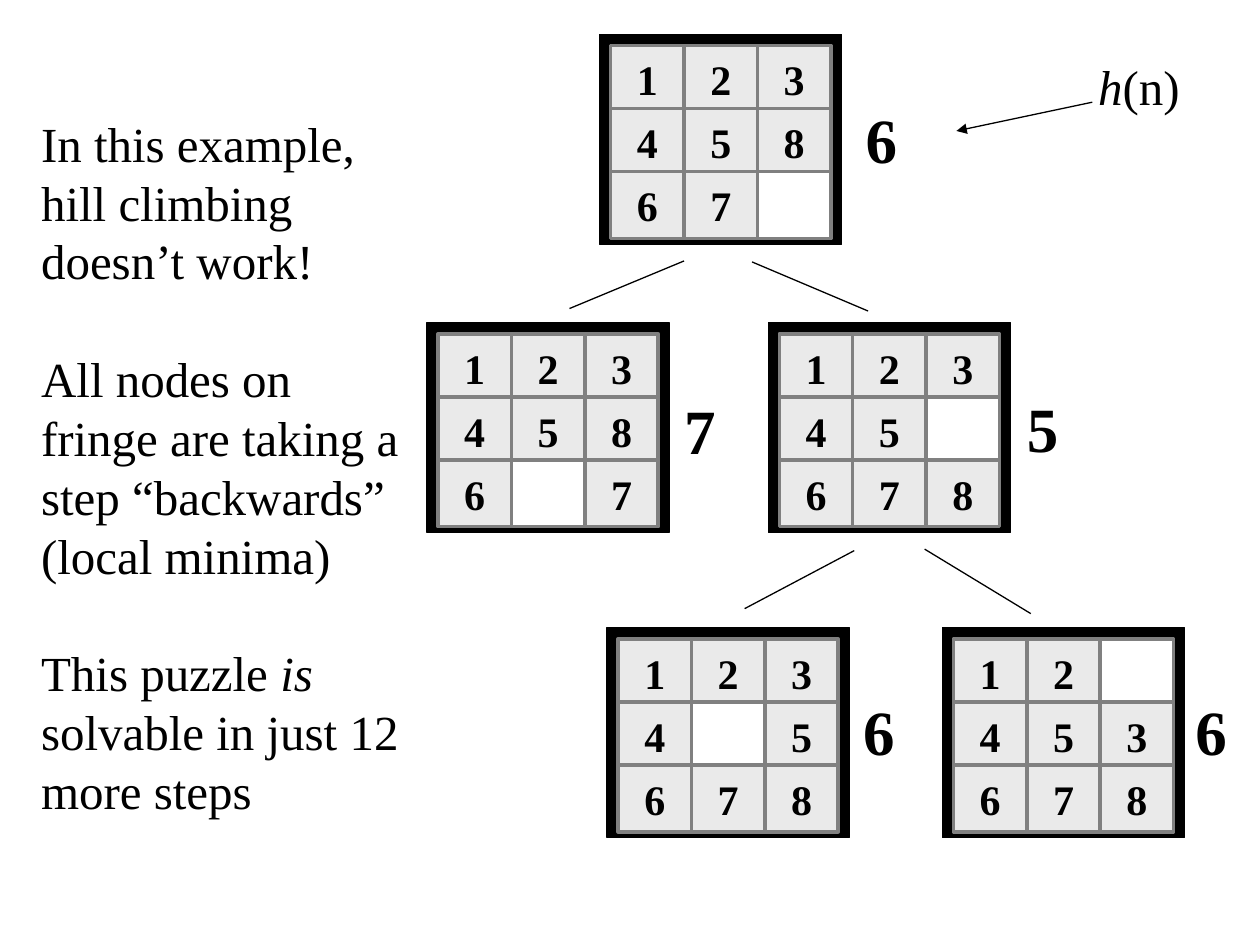
"""Build a slide showing hill climbing stuck in a local minimum of the 8-puzzle."""
from lxml import etree
from pptx import Presentation
from pptx import util as u
from pptx.dml.color import RGBColor
from pptx.enum import shapes, text
from pptx.oxml.ns import qn

BLACK = RGBColor(0x00, 0x00, 0x00)
WHITE = RGBColor(0xFF, 0xFF, 0xFF)
TILE_GREY = RGBColor(0xEA, 0xEA, 0xEA)
EDGE_GREY = RGBColor(0x80, 0x80, 0x80)
FONT = "Times New Roman"

PUZZLES = [
    {"at": (12.09, 0.69), "rows": ("123", "458", "67 "), "score": ("6", 17.2, 1.91)},
    {"at": (15.49, 6.5), "rows": ("123", "45 ", "678"), "score": ("5", 20.45, 7.72)},
    {"at": (8.61, 6.5), "rows": ("123", "458", "6 7"), "score": ("7", 13.54, 7.77)},
    {"at": (12.24, 12.65), "rows": ("123", "4 5", "678"), "score": ("6", 17.15, 13.84)},
    {"at": (19.0, 12.65), "rows": ("12 ", "453", "678"), "score": ("6", 23.85, 13.84)},
]
BRANCHES = [
    (13.79, 5.26, 11.48, 6.22),
    (15.16, 5.28, 17.5, 6.27),
    (17.22, 11.1, 15.01, 12.27),
    (18.64, 11.07, 20.78, 12.37),
]
SCORE_ARROW = (22.02, 2.06, 19.28, 2.64)
REMARKS = [
    (0, [("In this example, hill climbing doesn’t work!", False)]),
    (33.6, [("All nodes on fringe are taking a step “backwards”", False)]),
    (0, [("(local minima)", False)]),
    (33.6, [("This puzzle ", False), ("is", True),
            (" solvable in just 12 more steps", False)]),
]
HEURISTIC = [(0, [("h", True), ("(n)", False)])]

FRAME_SIZE = (4.88, 4.24)
TILE_SIZE = (1.48, 1.35)
TILE_INSET = (0.22, 0.23)
TILE_PITCH = (1.48, 1.27)


def add_run(paragraph, words, size, bold=False, italic=False):
    run = paragraph.add_run()
    run.text = words
    font = run.font
    font.name, font.size = FONT, u.Pt(size)
    font.bold, font.italic = bold, italic
    font.color.rgb = BLACK


def add_box(group, box, fill, edge, weight):
    rect = group.shapes.add_shape(shapes.MSO_SHAPE.RECTANGLE, *map(u.Cm, box))
    rect.shadow.inherit = False
    rect.fill.solid()
    rect.fill.fore_color.rgb = fill
    rect.line.color.rgb = edge
    rect.line.width = u.Pt(weight)
    return rect


def add_puzzle(slide, left, top, rows):
    board = slide.shapes.add_group_shape()
    add_box(board, (left, top, *FRAME_SIZE), BLACK, BLACK, 0.75)
    for row, digits in enumerate(rows):
        for col, digit in enumerate(digits):
            x = left + TILE_INSET[0] + col * TILE_PITCH[0]
            y = top + TILE_INSET[1] + row * TILE_PITCH[1]
            fill = WHITE if digit == " " else TILE_GREY
            tile = add_box(board, (x, y, *TILE_SIZE), fill, EDGE_GREY, 2)
            if digit != " ":
                frame = tile.text_frame
                frame.vertical_anchor = text.MSO_ANCHOR.MIDDLE
                label = frame.paragraphs[0]
                label.alignment = text.PP_ALIGN.CENTER
                add_run(label, digit, 24, bold=True)


def add_text(slide, box, paragraphs, size, wrap=False, bold=False):
    frame = slide.shapes.add_textbox(*map(u.Cm, box)).text_frame
    frame.word_wrap = wrap
    for index, (gap, runs) in enumerate(paragraphs):
        paragraph = frame.add_paragraph() if index else frame.paragraphs[0]
        paragraph.space_before = u.Pt(gap)
        for words, italic in runs:
            add_run(paragraph, words, size, bold, italic)


def add_line(slide, ends, arrow=False):
    line = slide.shapes.add_connector(shapes.MSO_CONNECTOR.STRAIGHT, *map(u.Cm, ends))
    line.line.color.rgb = BLACK
    line.line.width = u.Pt(0.75)
    if arrow:
        etree.SubElement(line.line._get_or_add_ln(), qn("a:tailEnd"), type="triangle")
    etree.SubElement(line._element.spPr, qn("a:effectLst"))


def main():
    deck = Presentation()
    deck.slide_width, deck.slide_height = u.Cm(25.4), u.Cm(19.05)
    slide = deck.slides.add_slide(deck.slide_layouts[6])
    for puzzle in PUZZLES:
        add_puzzle(slide, *puzzle["at"], puzzle["rows"])
    for branch in BRANCHES:
        add_line(slide, branch)
    for puzzle in PUZZLES:
        score, left, top = puzzle["score"]
        add_text(slide, (left, top, 1.14, 1.78), [(0, [(score, False)])], 36, bold=True)
    add_text(slide, (0.58, 2.16, 8.08, 14.63), REMARKS, 28, wrap=True)
    add_text(slide, (21.89, 1.02, 2.16, 1.45), HEURISTIC, 28)
    add_line(slide, SCORE_ARROW, arrow=True)
    deck.save("out.pptx")


if __name__ == "__main__":
    main()
